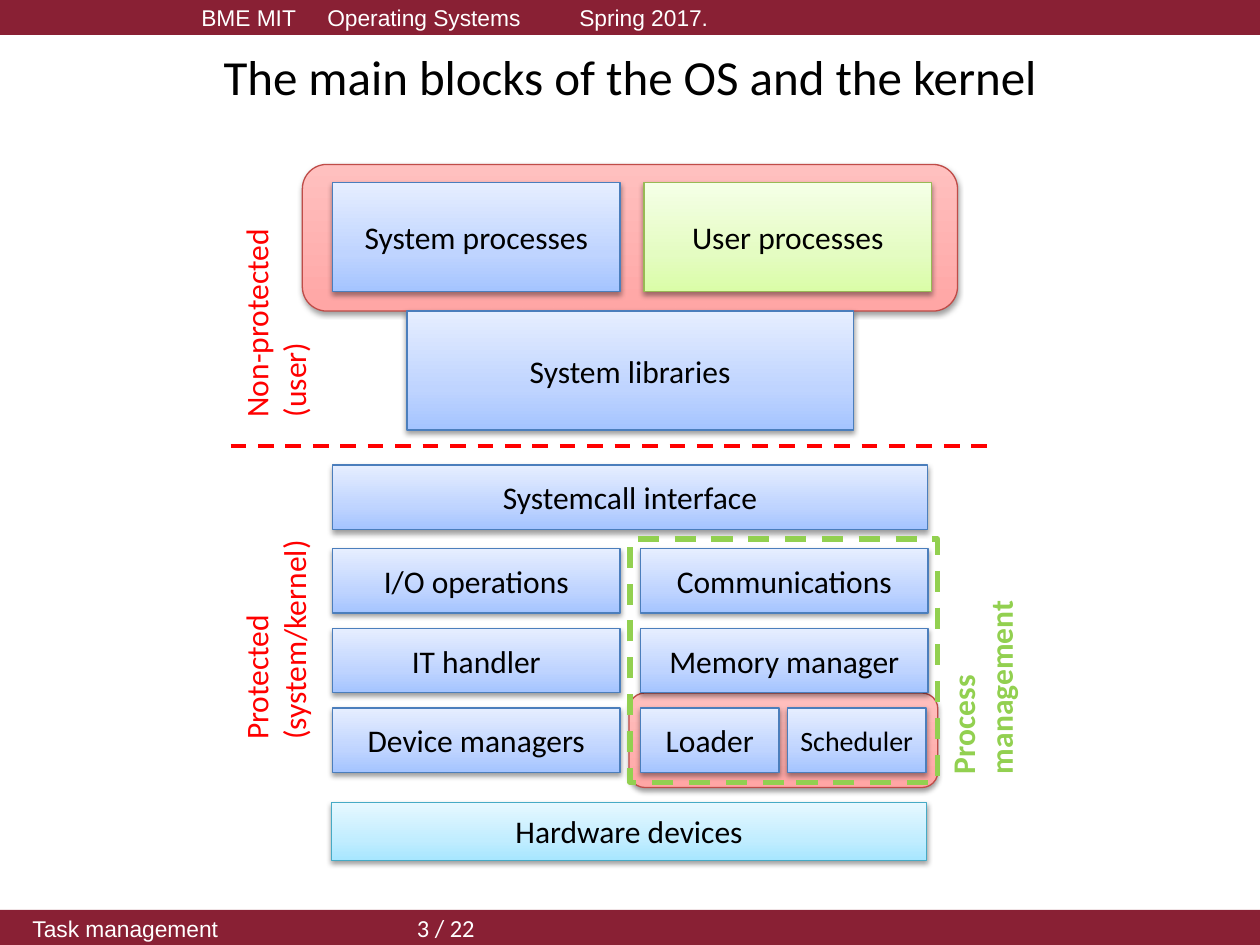
from copy import deepcopy
from dataclasses import dataclass

from lxml import etree
from pptx import Presentation
from pptx.dml.color import RGBColor
from pptx.enum import dml, shapes, text
from pptx.oxml import ns
from pptx.util import Pt


@dataclass(frozen=True)
class Tint:
    """Gradient stops from bottom to top as (position, colour), and the outline."""
    stops: tuple
    edge: str


@dataclass(frozen=True)
class Theme:
    font: str = "Calibri"
    bar_font: str = "Arial"
    bar: str = "892034"
    bar_text: str = "FFFFFF"
    ink: str = "000000"
    boundary: str = "FF0000"
    process: str = "92D050"
    title_size: int = 28
    block_size: int = 18
    small_size: int = 16
    page_size: int = 14
    bar_size: int = 13
    blue: Tint = Tint(((0, "A4C4FF"), (0.35, "BFD4FF"), (1, "E6EEFF")), "4B7EBC")
    green: Tint = Tint(((0, "DAFDA7"), (0.35, "E4FCC2"), (1, "F5FFE7")), "98B955")
    cyan: Tint = Tint(((0, "A7E6FF"), (0.35, "C1EDFF"), (1, "E7F8FF")), "46AAC5")
    red: Tint = Tint(((0, "FFA6A5"), (1, "FFC0BF")), "BF4C48")


def rgb(value):
    return RGBColor.from_string(value)


def add_child(parent, tag, **attributes):
    return etree.SubElement(parent, ns.qn(tag), attributes)


class SlideBuilder:
    def __init__(self, slide, theme):
        self.slide, self.theme = slide, theme

    def style(self, paragraph, size, color, font=None, bold=None):
        face = paragraph.font
        face.name, face.size, face.bold = font or self.theme.font, Pt(size), bold
        face.color.rgb = rgb(color)

    def title(self, wording, box):
        heading = self.slide.shapes.title
        heading.left, heading.top, heading.width, heading.height = map(Pt, box)
        frame = heading.text_frame
        frame.text = wording
        frame.vertical_anchor = text.MSO_ANCHOR.MIDDLE
        frame.paragraphs[0].alignment = text.PP_ALIGN.CENTER
        self.style(frame.paragraphs[0], self.theme.title_size, self.theme.ink)

    def shape(self, box, kind=shapes.MSO_SHAPE.RECTANGLE):
        item = self.slide.shapes.add_shape(kind, *map(Pt, box))
        item.shadow.inherit = False
        return item

    def bar(self, top, wording, indent):
        """Add a full-width strip whose text sits on one-inch tab stops; return its paragraph."""
        strip = self.shape((0, top, 720, 20))
        strip.fill.solid()
        strip.fill.fore_color.rgb = rgb(self.theme.bar)
        strip.line.fill.background()
        paragraph = strip.text_frame.paragraphs[0]
        paragraph.text = wording
        paragraph.alignment = text.PP_ALIGN.LEFT
        properties = paragraph._p.get_or_add_pPr()
        properties.set("marL", str(Pt(indent)))
        properties.set("indent", "0")
        properties.set("defTabSz", str(Pt(72)))
        self.style(paragraph, self.theme.bar_size, self.theme.bar_text, self.theme.bar_font)
        return paragraph

    def raised(self, box, tint, kind=shapes.MSO_SHAPE.RECTANGLE):
        """Add a shape with a vertical gradient, a thin outline and a soft shadow."""
        item = self.shape(box, kind)
        item.fill.gradient()
        item.fill.gradient_angle = 90
        stop_list = item._element.spPr.find(".//" + ns.qn("a:gsLst"))
        for _ in tint.stops[2:]:
            stop_list.append(deepcopy(stop_list[-1]))
        for stop, (position, color) in zip(item.fill.gradient_stops, tint.stops):
            stop.position = position
            stop.color.rgb = rgb(color)
        item.line.color.rgb = rgb(tint.edge)
        item.line.width = Pt(0.75)
        effects = item._element.spPr.find(ns.qn("a:effectLst"))
        shadow = add_child(effects, "a:outerShdw", blurRad=str(Pt(3.1)),
                           dist=str(Pt(1.6)), dir="5400000", rotWithShape="0")
        add_child(add_child(shadow, "a:srgbClr", val="000000"), "a:alpha", val="38000")
        return item

    def panel(self, box):
        self.raised(box, self.theme.red, shapes.MSO_SHAPE.ROUNDED_RECTANGLE)

    def block(self, wording, box, tint=None, size=None):
        frame = self.raised(box, tint or self.theme.blue).text_frame
        frame.margin_left = frame.margin_right = 0
        frame.vertical_anchor = text.MSO_ANCHOR.MIDDLE
        frame.text = wording
        frame.paragraphs[0].alignment = text.PP_ALIGN.CENTER
        self.style(frame.paragraphs[0], size or self.theme.block_size, self.theme.ink)

    def side_label(self, wording, box, color, bold=None, wrap=True):
        """Add text that reads upwards."""
        frame = self.slide.shapes.add_textbox(*map(Pt, box)).text_frame
        frame._txBody.bodyPr.set("vert", "vert270")
        frame.word_wrap = wrap
        frame.auto_size = text.MSO_AUTO_SIZE.SHAPE_TO_FIT_TEXT
        frame.text = wording
        for paragraph in frame.paragraphs:
            self.style(paragraph, self.theme.block_size, color, bold=bold)

    def dash(self, line, color, width):
        line.color.rgb = rgb(color)
        line.width = Pt(width)
        line.dash_style = dml.MSO_LINE.DASH

    def dashed_line(self, left, right, y):
        divider = self.slide.shapes.add_connector(
            shapes.MSO_CONNECTOR.STRAIGHT, Pt(left), Pt(y), Pt(right), Pt(y))
        add_child(divider._element.spPr, "a:effectLst")
        self.dash(divider.line, self.theme.boundary, 2.25)

    def dashed_frame(self, box):
        outline = self.shape(box)
        outline.fill.background()
        self.dash(outline.line, self.theme.process, 3)


def main():
    deck = Presentation()
    deck.slide_width, deck.slide_height = Pt(720), Pt(540)
    theme = Theme()
    page = SlideBuilder(deck.slides.add_slide(deck.slide_layouts[5]), theme)

    page.bar(0, "BME MIT\tOperating Systems\tSpring 2017.", 108)
    footer = page.bar(520, "Task management\t\t ", 11.5)
    page_number = footer.add_run()
    page_number.text = "3 / 22"
    page_number.font.name, page_number.font.size = theme.font, Pt(theme.page_size)
    page.title("The main blocks of the OS and the kernel", (36, 21.6, 648, 44))

    left, right, half, full = 190, 366, 164.4, 340
    page.panel((359.5, 396, 176.4, 54))
    page.panel((172.8, 94, 374.4, 83.8))

    page.block("Hardware devices", (189.5, 458.6, full, 33), theme.cyan)
    page.block("System libraries", (232.6, 177.8, 255, 68))
    page.block("System processes", (left, 104.3, half, 62.5))
    page.block("User processes", (368, 104.3, half, 62.5), theme.green)
    page.dashed_line(131.8, 564.5, 255)

    kernel_top, row_step, row_height = 313.6, 45.5, 36.8
    page.block("Systemcall interface", (left, 265.7, full, row_height))
    rows = (("I/O operations", "Communications"),
            ("IT handler", "Memory manager"),
            ("Device managers", None))
    for index, (device_side, process_side) in enumerate(rows):
        top = kernel_top + index * row_step
        page.block(device_side, (left, top, half, row_height))
        if process_side:
            page.block(process_side, (right, top, half, row_height))
    page.block("Loader", (right, top, 79.2, row_height))
    page.block("Scheduler", (450, top, 79.2, row_height), size=theme.small_size)

    page.dashed_frame((360, 308, 175.7, 139))
    page.side_label("Non-protected\n(user)", (131.8, 129.6, 58.3, 116),
                    theme.boundary, wrap=False)
    page.side_label("Protected\n(system/kernel)", (131.8, 292.3, 58.3, 137.5), theme.boundary)
    page.side_label("Process management", (535.7, 332, 58.3, 117.4), theme.process, bold=True)

    deck.save("out.pptx")


if __name__ == "__main__":
    main()
